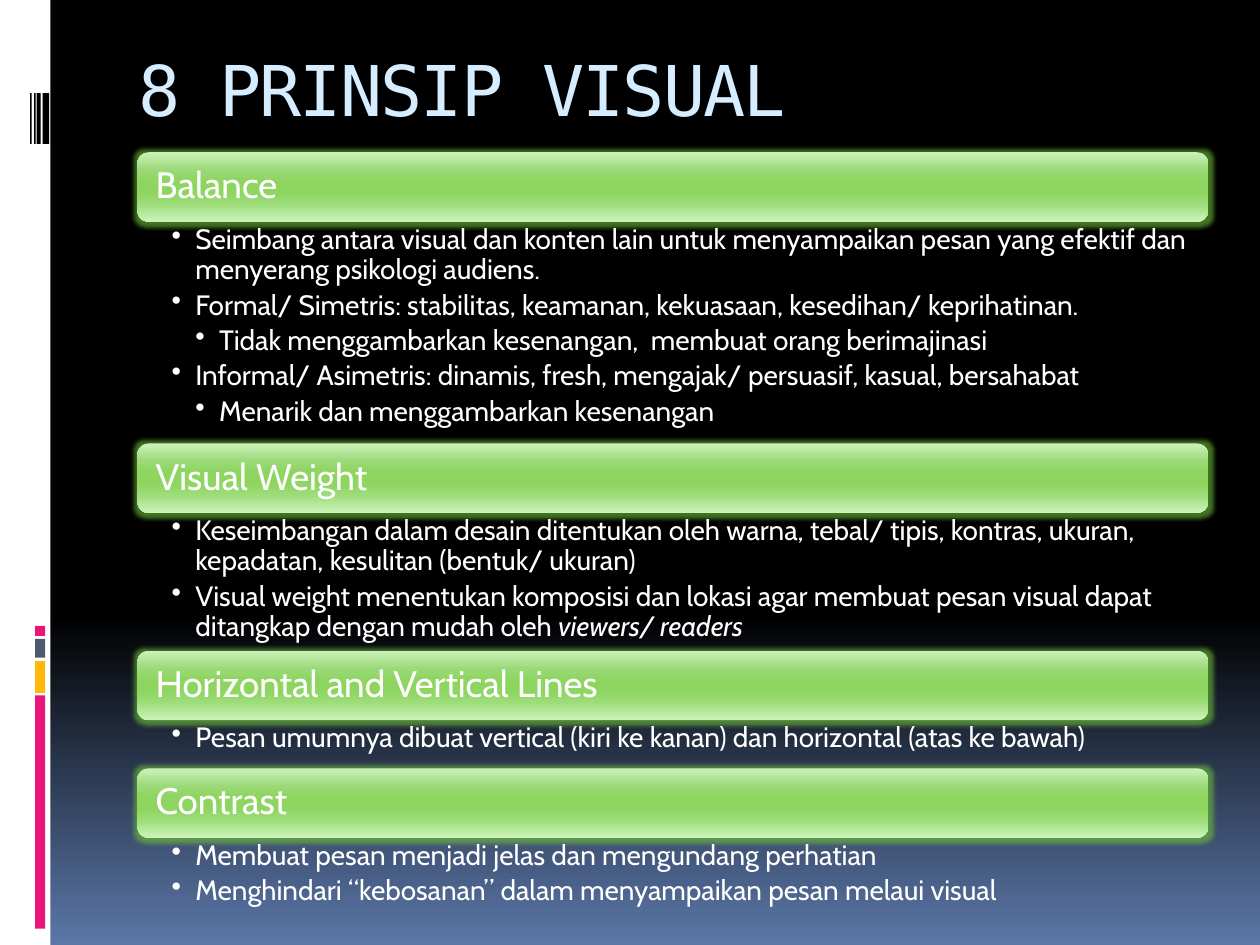
"""Build the "8 PRINSIP VISUAL" slide with four headed principles."""
from dataclasses import dataclass

from lxml.etree import SubElement
from pptx import Presentation
from pptx.dml.color import RGBColor
from pptx.enum.shapes import MSO_SHAPE
from pptx.enum.text import MSO_ANCHOR, PP_ALIGN
from pptx.oxml.ns import qn
from pptx.util import Cm, Pt


@dataclass(frozen=True)
class Theme:
    white: str = "FFFFFF"
    black: str = "000000"
    pink: str = "EA157A"
    amber: str = "FEB80A"
    slate: str = "4E5B6F"
    title: str = "D6ECFF"
    glow: str = "6FC039"
    night: tuple = ((0, "000000"), (65, "000000"), (100, "5B77A8"))
    gloss: tuple = ((0, "CCF2BB"), (25, "9CD979"), (40, "8FD562"), (50, "8DD55F"),
                    (60, "8FD562"), (75, "9EDD7B"), (100, "CBF4B9"))
    title_font: str = "DejaVu Sans Mono"
    body_font: str = "Cabin"
    title_size: int = 40
    heading_size: int = 21
    body_size: int = 16


theme = Theme()


def paint_gradient(fill, owner, stops):
    fill.gradient()
    fill.gradient_angle = 270
    stop_list = owner.find(".//" + qn("a:gsLst"))
    stop_list.clear()
    for percent, color in stops:
        stop = SubElement(stop_list, qn("a:gs"), pos=str(percent * 1000))
        SubElement(stop, qn("a:srgbClr"), val=color)


def add_run(paragraph, text, size, color, font, italic=None):
    run = paragraph.add_run()
    run.text = text
    run.font.size = Pt(size)
    run.font.name = font
    run.font.italic = italic
    run.font.color.rgb = RGBColor.from_string(color)
    return run


presentation = Presentation()
presentation.slide_width, presentation.slide_height = Cm(25.4), Cm(19.05)
slide = presentation.slides.add_slide(presentation.slide_layouts[6])
paint_gradient(slide.background.fill, slide.element, theme.night)

side_strips = [
    (0, 0, 1.02, 19.05, theme.white),
    (0.71, 14.02, 0.2, 4.7, theme.pink),
    (0.71, 13.33, 0.2, 0.64, theme.amber),
    (0.71, 12.88, 0.2, 0.38, theme.slate),
    (0.71, 12.62, 0.2, 0.2, theme.pink),
    (0.86, 1.88, 0.13, 1.02, theme.black),
    (0.74, 1.88, 0.08, 1.02, theme.black),
    (0.69, 1.88, 0.03, 1.02, theme.black),
    (0.61, 1.88, 0.03, 1.02, theme.black),
]
for left, top, width, height, color in side_strips:
    strip = slide.shapes.add_shape(MSO_SHAPE.RECTANGLE, Cm(left), Cm(top), Cm(width), Cm(height))
    strip.shadow.inherit = False
    strip.fill.solid()
    strip.fill.fore_color.rgb = RGBColor.from_string(color)
    strip.line.fill.background()

title_frame = slide.shapes.add_textbox(Cm(2.54), Cm(0.81), Cm(21.59), Cm(2.54)).text_frame
title_frame.word_wrap = True
title_run = add_run(title_frame.paragraphs[0], "8 PRINSIP VISUAL",
                    theme.title_size, theme.title, theme.title_font)
title_run.font._element.set("spc", "-100")

principles = [
    ("Balance", 4.47, [
        (0, "Seimbang antara visual dan konten lain untuk menyampaikan pesan yang efektif dan "
            "menyerang psikologi audiens.", ""),
        (0, "Formal/ Simetris: stabilitas, keamanan, kekuasaan, kesedihan/ keprihatinan.", ""),
        (1, "Tidak menggambarkan kesenangan,  membuat orang berimajinasi", ""),
        (0, "Informal/ Asimetris: dinamis, fresh, mengajak/ persuasif, kasual, bersahabat", ""),
        (1, "Menarik dan menggambarkan kesenangan", ""),
    ]),
    ("Visual Weight", 2.78, [
        (0, "Keseimbangan dalam desain ditentukan oleh warna, tebal/ tipis, kontras, ukuran, "
            "kepadatan, kesulitan (bentuk/ ukuran)", ""),
        (0, "Visual weight menentukan komposisi dan lokasi agar membuat pesan visual dapat "
            "ditangkap dengan mudah oleh ", "viewers/ readers"),
    ]),
    ("Horizontal and Vertical Lines", 0.97, [
        (0, "Pesan umumnya dibuat vertical (kiri ke kanan) dan horizontal (atas ke bawah)", ""),
    ]),
    ("Contrast", 1.55, [
        (0, "Membuat pesan menjadi jelas dan mengundang perhatian", ""),
        (0, "Menghindari “kebosanan” dalam menyampaikan pesan melaui visual", ""),
    ]),
]
content_left, content_width, heading_height = Cm(2.77), Cm(21.59), Cm(1.4)
top = Cm(3.07)
for heading, details_height, details in principles:
    bar = slide.shapes.add_shape(MSO_SHAPE.ROUNDED_RECTANGLE, content_left, top,
                                 content_width, heading_height)
    bar.shadow.inherit = False
    paint_gradient(bar.fill, bar.element, theme.gloss)
    bar.line.fill.background()
    glow = SubElement(bar.element.spPr.find(qn("a:effectLst")), qn("a:glow"), rad=str(Pt(5)))
    glow_color = SubElement(glow, qn("a:srgbClr"), val=theme.glow)
    SubElement(glow_color, qn("a:alpha"), val="60000")
    heading_frame = bar.text_frame
    heading_frame.word_wrap = True
    heading_frame.vertical_anchor = MSO_ANCHOR.MIDDLE
    heading_frame.margin_left = heading_frame.margin_right = Cm(0.3)
    heading_line = heading_frame.paragraphs[0]
    heading_line.alignment = PP_ALIGN.LEFT
    heading_line.line_spacing = 0.9
    add_run(heading_line, heading, theme.heading_size, theme.white, theme.body_font)
    top += heading_height

    details_frame = slide.shapes.add_textbox(content_left, top, content_width,
                                             Cm(details_height)).text_frame
    details_frame.word_wrap = True
    details_frame.margin_left, details_frame.margin_right = Cm(0.69), Cm(0.41)
    details_frame.margin_top = details_frame.margin_bottom = Cm(0.07)
    for index, (level, plain, emphasis) in enumerate(details):
        detail = details_frame.add_paragraph() if index else details_frame.paragraphs[0]
        detail.level = level
        detail.line_spacing = 0.9
        detail.space_after = Pt(3)
        detail_format = detail._p.get_or_add_pPr()
        detail_format.set("marL", str(Cm(0.48) * (level + 1)))
        detail_format.set("indent", str(-Cm(0.48)))
        SubElement(detail_format, qn("a:buChar"), char="•")
        add_run(detail, plain, theme.body_size, theme.white, theme.body_font)
        if emphasis:
            add_run(detail, emphasis, theme.body_size, theme.white, theme.body_font, True)
    top += Cm(details_height)

presentation.save("out.pptx")
